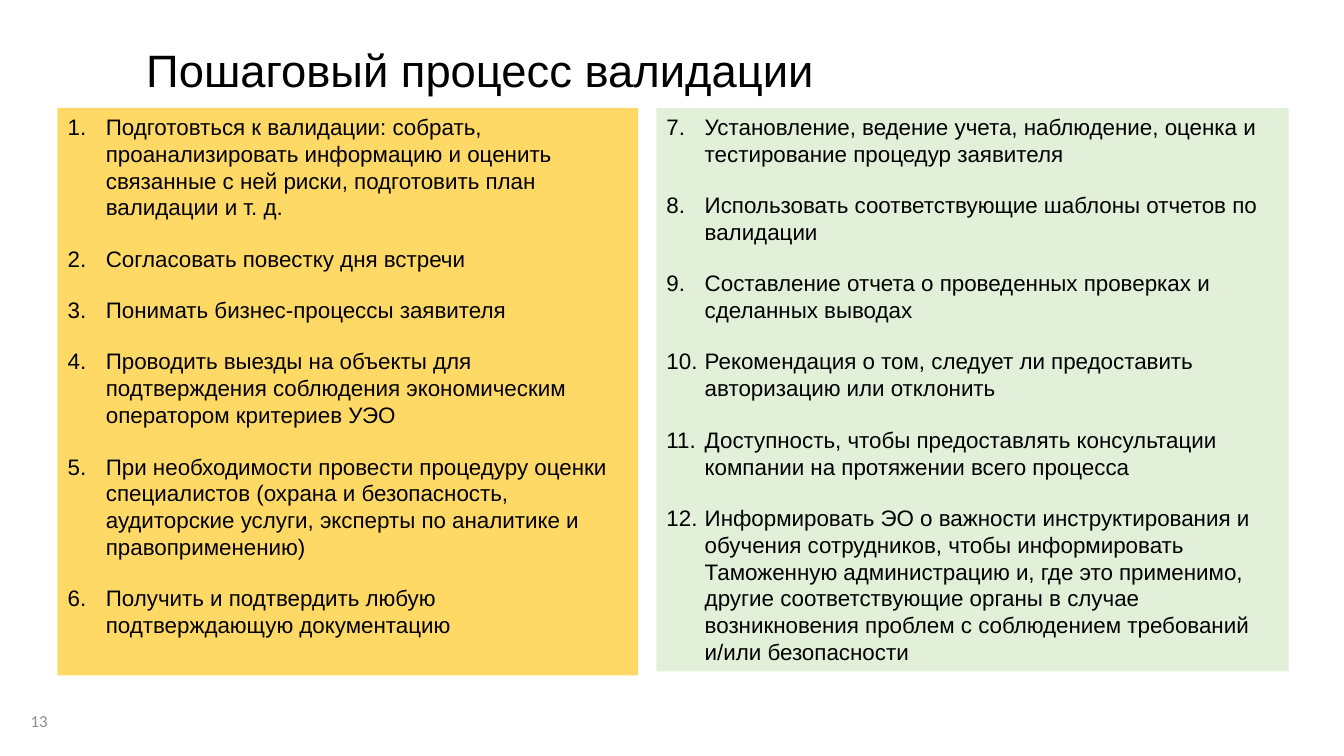
from lxml.etree import SubElement
from pptx import Presentation
from pptx.dml.color import RGBColor
from pptx.enum.text import MSO_ANCHOR as Anchor, MSO_AUTO_SIZE as AutoSize, PP_ALIGN as Align
from pptx.oxml.ns import qn
from pptx.util import Emu, Pt

EMU_PER_PX = 9144
COLORS = {"text": "000000", "number": "8C8C8C", "yellow": "FFD966", "green": "E2F0D9"}
INDENT = 38
TWO_CONTENT_LAYOUT = 3

PREPARATION_STEPS = [
    "Подготовться к валидации: собрать, проанализировать информацию и оценить "
    "связанные с ней риски, подготовить план валидации и т. д.",
    "Согласовать повестку дня встречи",
    "Понимать бизнес-процессы заявителя",
    "Проводить выезды на объекты для подтверждения соблюдения экономическим "
    "оператором критериев УЭО",
    "При необходимости провести процедуру оценки специалистов (охрана и безопасность, "
    "аудиторские услуги, эксперты по аналитике и правоприменению)",
    "Получить и подтвердить любую подтверждающую документацию",
]
REPORTING_STEPS = [
    "Установление, ведение учета, наблюдение, оценка и тестирование процедур заявителя",
    "Использовать соответствующие шаблоны отчетов по валидации",
    "Составление отчета о проведенных проверках и сделанных выводах",
    "Рекомендация о том, следует ли предоставить авторизацию или отклонить",
    "Доступность, чтобы предоставлять консультации компании на протяжении всего процесса",
    "Информировать ЭО о важности инструктирования и обучения сотрудников, чтобы "
    "информировать Таможенную администрацию и, где это применимо, другие "
    "соответствующие органы в случае возникновения проблем с соблюдением требований "
    "и/или безопасности",
]


def px(length):
    return Emu(length * EMU_PER_PX)


def color(name):
    return RGBColor.from_string(COLORS[name])


def place(shape, left, top, width, height):
    shape.left, shape.top = px(left), px(top)
    shape.width, shape.height = px(width), px(height)


def style(paragraph, size, font_name="Arial", color_name="text", align=Align.LEFT):
    paragraph.alignment = align
    font = paragraph.font
    font.size = Pt(size)
    font.name = font_name
    font.color.rgb = color(color_name)


def number_paragraph(paragraph, start):
    properties = paragraph._p.get_or_add_pPr()
    properties.set("marL", str(px(INDENT)))
    properties.set("indent", str(-px(INDENT)))
    SubElement(properties, qn("a:buFont"), typeface="Arial")
    SubElement(properties, qn("a:buAutoNum"), type="arabicPeriod", startAt=str(start))


def fill_title(title, text, box):
    place(title, *box)
    frame = title.text_frame
    frame.text = text
    frame.auto_size = AutoSize.NONE
    frame.vertical_anchor = Anchor.MIDDLE
    paragraph = frame.paragraphs[0]
    paragraph.line_spacing = 0.9
    style(paragraph, 32.4)


def fill_steps(body, steps, start, fill_name, box):
    place(body, *box)
    body.fill.solid()
    body.fill.fore_color.rgb = color(fill_name)
    frame = body.text_frame
    frame.auto_size = AutoSize.NONE
    frame.vertical_anchor = Anchor.TOP
    for index, step in enumerate(steps):
        paragraph = frame.add_paragraph() if index else frame.paragraphs[0]
        paragraph.text = step
        number_paragraph(paragraph, start)
        paragraph.space_before = Pt(17.5 if index else 0)
        style(paragraph, 16)


def add_page_number(slide, text, box):
    frame = slide.shapes.add_textbox(*map(px, box)).text_frame
    frame.word_wrap = True
    frame.vertical_anchor = Anchor.MIDDLE
    frame.text = text
    style(frame.paragraphs[0], 12, "Calibri", "number", Align.RIGHT)


def main():
    presentation = Presentation()
    presentation.slide_width, presentation.slide_height = px(1333), px(750)
    slide = presentation.slides.add_slide(presentation.slide_layouts[TWO_CONTENT_LAYOUT])
    title, left_body, right_body = slide.placeholders

    fill_title(title, "Пошаговый процесс валидации", (135, 40, 1088, 64))
    fill_steps(left_body, PREPARATION_STEPS, 1, "yellow", (57, 107, 576, 563))
    fill_steps(right_body, REPORTING_STEPS, len(PREPARATION_STEPS) + 1, "green",
               (651, 107, 627, 559))
    add_page_number(slide, "13", (0, 695, 57, 40))
    presentation.save("out.pptx")


if __name__ == "__main__":
    main()
